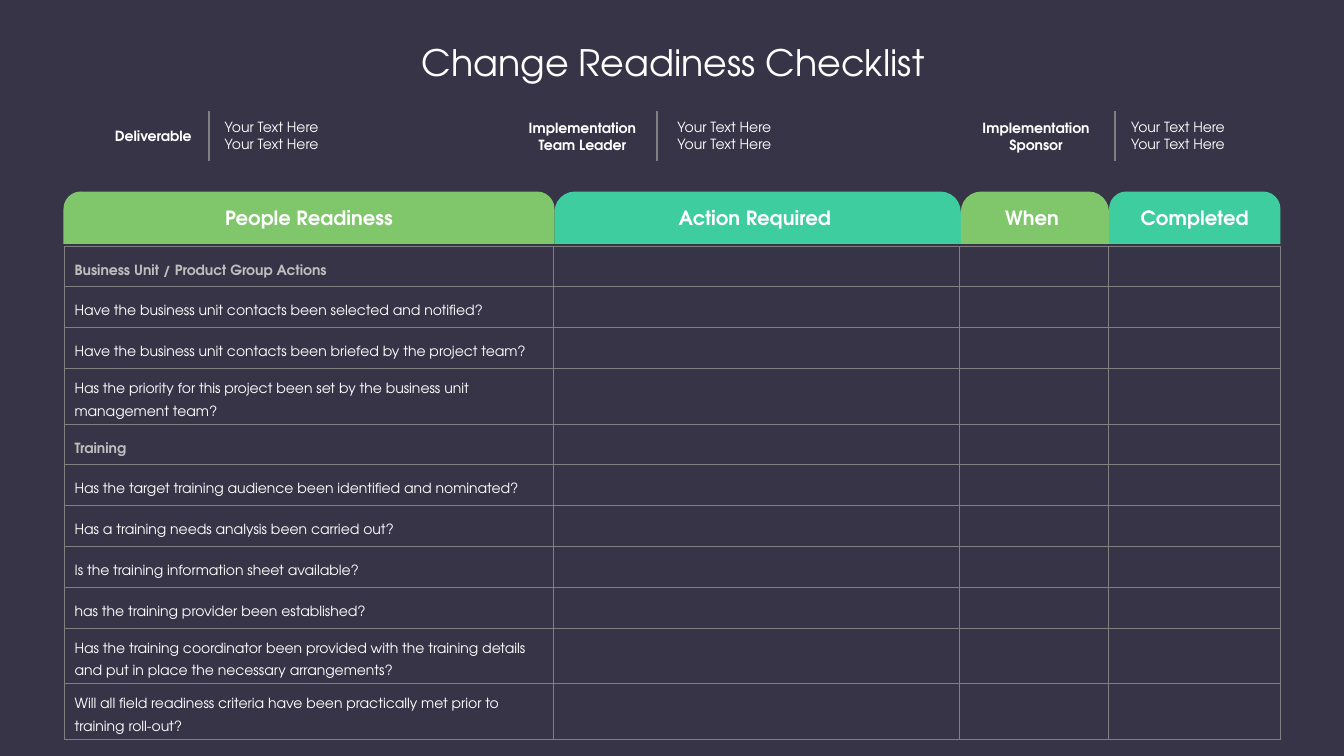
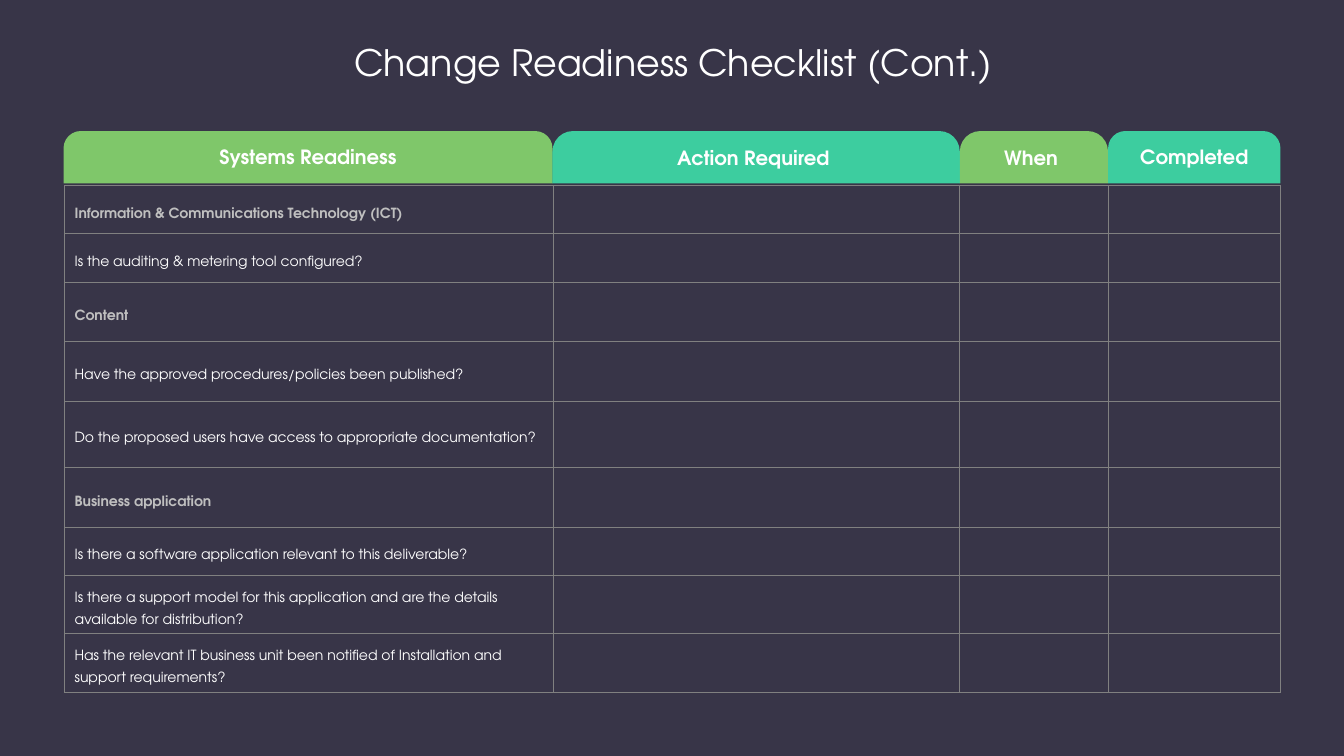
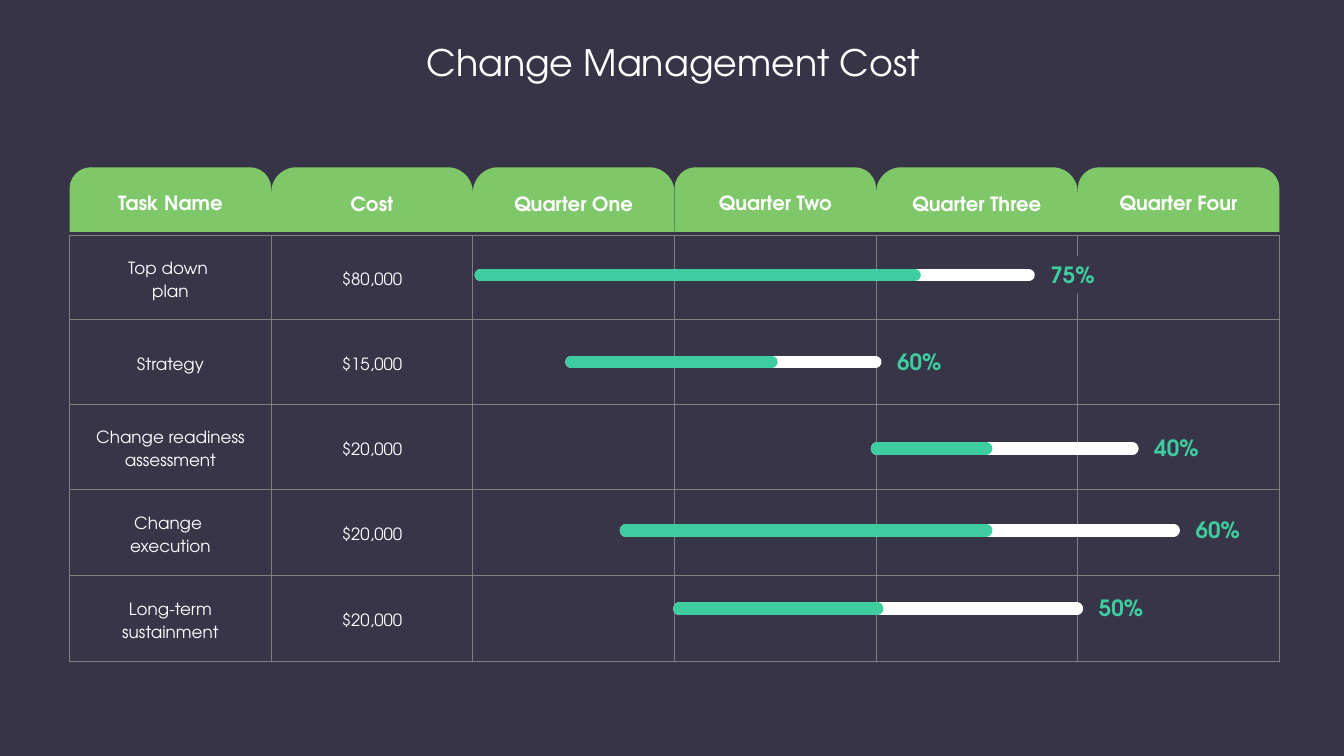
from dataclasses import dataclass
from itertools import accumulate

from pptx import Presentation
from pptx import util as u
from pptx.dml import color
from pptx.enum import shapes, text
from pptx.oxml import ns, xmlchemy

FONT = "TeX Gyre Adventor"
NIGHT, DUSK = "383447", "383548"
GREEN, LIME, TEAL = "7FC76A", "7FC86A", "3DCD9F"
WHITE, SILVER, GREY = "FFFFFF", "BFBFBF", "808080"
CENTER, LEFT = text.PP_ALIGN.CENTER, text.PP_ALIGN.LEFT
MIDDLE, TOP = text.MSO_ANCHOR.MIDDLE, text.MSO_ANCHOR.TOP
SNUG, ROUND = 0.33, 0.39  # corner sizes of the column tabs
SLIDE_AXIS = 6.68


@dataclass
class Style:
    size: float
    colour: str = WHITE
    bold: bool = False
    align: int = CENTER
    spacing: float | None = None


@dataclass
class Tab:
    label: str
    width: float
    fill: str
    corner: float


@dataclass
class Contact:
    role: str
    role_left: float
    role_width: float
    rule_x: float
    text_left: float


@dataclass
class Progress:
    start: float
    done: float
    end: float
    y: float
    share: str


TITLE = Style(26)
TAB = Style(14, bold=True)
ROLE = Style(10, bold=True)
DETAIL = Style(10, align=LEFT)
QUESTION = Style(10, align=LEFT, spacing=16)
SECTION = Style(10, SILVER, True, LEFT, 16)
TASK = Style(12, spacing=16.4)
SHARE = Style(16, TEAL, True, LEFT)

CHECK_COLUMNS = [4.85, 4.03, 1.47, 1.71]

CONTACTS = [
    Contact("Deliverable", 1.03, 0.98, 2.07, 2.13),
    Contact("Implementation Team Leader", 4.95, 1.65, 6.52, 6.62),
    Contact("Implementation Sponsor", 9.44, 1.67, 11.06, 11.12),
]

# Checklist rows: wording, style, row height
LINE, PAIR = 0.394, 0.55
LINE = round((4.8 - 3 * PAIR) / 8, 3)
PEOPLE = [
    ("Business Unit / Product Group Actions", SECTION, LINE),
    ("Have the business unit contacts been selected and notified?", QUESTION, LINE),
    ("Have the business unit contacts been briefed by the project team?", QUESTION, LINE),
    ("Has the priority for this project been set by the business unit management team?",
     QUESTION, PAIR),
    ("Training", SECTION, LINE),
    ("Has the target training audience been identified and nominated?", QUESTION, LINE),
    ("Has a training needs analysis been carried out?", QUESTION, LINE),
    ("Is the training information sheet available?", QUESTION, LINE),
    ("has the training provider been established?", QUESTION, LINE),
    ("Has the training coordinator been provided with the training details "
     "and put in place the necessary arrangements?", QUESTION, PAIR),
    ("Will all field readiness criteria have been practically met prior to training roll-out?",
     QUESTION, PAIR),
]
SYSTEMS = [
    ("Information & Communications Technology (ICT)", SECTION, 0.48),
    ("Is the auditing & metering tool configured?", QUESTION, 0.48),
    ("Content", SECTION, 0.59),
    ("Have the approved procedures/policies been published?", QUESTION, 0.59),
    ("Do the proposed users have access to appropriate documentation?", QUESTION, 0.66),
    ("Business application", SECTION, 0.59),
    ("Is there a software application relevant to this deliverable?", QUESTION, 0.48),
    ("Is there a support model for this application and are the details "
     "available for distribution?", QUESTION, 0.58),
    ("Has the relevant IT business unit been notified of Installation and "
     "support requirements?", QUESTION, 0.58),
]

COST_TABS = [("Task Name", SNUG), ("Cost", ROUND), ("Quarter One", ROUND),
             ("Quarter Two", SNUG), ("Quarter Three", ROUND), ("Quarter Four", SNUG)]
TASKS = [
    ("Top down \nplan", "$80,000", 0.83),
    ("Strategy", "$15,000", 0.84),
    ("Change readiness assessment", "$20,000", 0.85),
    ("Change \nexecution", "$20,000", 0.85),
    ("Long-term sustainment", "$20,000", 0.85),
]
PROGRESS = [
    Progress(4.77, 9.07, 10.2, 2.73, "75%"),
    Progress(5.67, 7.65, 8.68, 3.59, "60%"),
    Progress(8.7, 9.78, 11.23, 4.45, "40%"),
    Progress(6.21, 9.78, 11.64, 5.26, "60%"),
    Progress(6.74, 8.7, 10.68, 6.04, "50%"),
]


def rgb(value: str) -> color.RGBColor:
    return color.RGBColor.from_string(value)


def paint(target, value: str) -> None:
    target.fill.solid()
    target.fill.fore_color.rgb = rgb(value)


def write(frame, words: str, style: Style) -> None:
    """Fill a text frame, one paragraph per line of words."""
    for index, line in enumerate(words.split("\n")):
        para = frame.add_paragraph() if index else frame.paragraphs[0]
        para.alignment = style.align
        if style.spacing:
            para.line_spacing = u.Pt(style.spacing)
        if line:
            span = para.add_run()
            span.text = line
            span.font.name = FONT
            span.font.size = u.Pt(style.size)
            span.font.bold = style.bold
            span.font.color.rgb = rgb(style.colour)


def add_text(page, words: str, style: Style, left: float, top: float, width: float,
             height: float, anchor=TOP, wrap: bool = False) -> None:
    box = page.shapes.add_textbox(*map(u.Inches, (left, top, width, height)))
    box.text_frame.word_wrap = wrap
    box.text_frame.vertical_anchor = anchor
    write(box.text_frame, words, style)


def add_block(page, kind, fill: str, left: float, top: float, width: float, height: float):
    block = page.shapes.add_shape(kind, *map(u.Inches, (left, top, width, height)))
    block.shadow.inherit = False
    paint(block, fill)
    block.line.fill.background()
    block.text_frame.word_wrap = False
    return block


def add_line(page, x1: float, y1: float, x2: float, y2: float, colour: str, weight: float,
             cap: str = "flat") -> None:
    line = page.shapes.add_connector(shapes.MSO_CONNECTOR.STRAIGHT,
                                     *map(u.Inches, (x1, y1, x2, y2)))
    line.line.color.rgb = rgb(colour)
    line.line.width = u.Pt(weight)
    properties = line.element.spPr
    properties.find(ns.qn("a:ln")).set("cap", cap)
    properties.append(xmlchemy.OxmlElement("a:effectLst"))


def add_page(deck, title: str, title_width: float):
    page = deck.slides.add_slide(deck.slide_layouts.get_by_name("Title Only"))
    box = page.shapes.title
    box.left, box.top = u.Inches(SLIDE_AXIS - title_width / 2), u.Inches(0.35)
    box.width, box.height = u.Inches(title_width), u.Inches(0.54)
    frame = box.text_frame
    frame.auto_size = text.MSO_AUTO_SIZE.NONE
    frame.word_wrap = False
    frame.vertical_anchor = TOP
    write(frame, title, TITLE)
    return page


def add_tabs(page, tabs: list[Tab], left: float, top: float, height: float,
             lift: float = 0) -> None:
    """Rounded column heads side by side; lift raises their labels."""
    lefts = accumulate((tab.width for tab in tabs), initial=left)
    for tab, tab_left in zip(tabs, lefts):
        block = add_block(page, shapes.MSO_SHAPE.ROUND_2_SAME_RECTANGLE, tab.fill,
                          tab_left, top, tab.width, height)
        block.adjustments[0] = tab.corner
        frame = block.text_frame
        frame.margin_top, frame.margin_bottom = 0, u.Inches(lift)
        frame.vertical_anchor = MIDDLE
        write(frame, tab.label, TAB)


def add_borders(cell) -> None:
    properties = cell._tc.get_or_add_tcPr()
    for side in ("a:lnL", "a:lnR", "a:lnT", "a:lnB"):
        edge = xmlchemy.OxmlElement(side)
        edge.set("w", str(u.Pt(0.75)))
        fill = xmlchemy.OxmlElement("a:solidFill")
        ink = xmlchemy.OxmlElement("a:srgbClr")
        ink.set("val", GREY)
        fill.append(ink)
        edge.append(fill)
        properties.append(edge)


def add_grid(page, rows: list[list[str]], styles: list[Style], heights: list[float],
             widths: list[float], left: float, top: float, fill: str) -> None:
    """Bordered table; each row gives its first cells, the rest stay empty."""
    frame = page.shapes.add_table(len(rows), len(widths), u.Inches(left), u.Inches(top),
                                  u.Inches(sum(widths)), u.Inches(sum(heights)))
    table = frame.table
    table.first_row = table.horz_banding = False
    for column, width in zip(table.columns, widths):
        column.width = u.Inches(width)
    for row, words, style, height in zip(table.rows, rows, styles, heights):
        row.height = u.Inches(height)
        for index, cell in enumerate(row.cells):
            add_borders(cell)
            paint(cell, fill)
            cell.vertical_anchor = MIDDLE
            write(cell.text_frame, words[index] if index < len(words) else "", style)


def add_checklist(page, heading: str, items: list[tuple[str, Style, float]],
                  widths: list[float], top: float, fill: str) -> None:
    labels = [heading, "Action Required ", "When ", "Completed"]
    fills = [GREEN, TEAL, GREEN, TEAL]
    corners = [SNUG, ROUND, ROUND, SNUG]
    add_tabs(page, list(map(Tab, labels, widths, fills, corners)), 0.63, top, 0.52, 0.06)
    questions, styles, heights = zip(*items)
    add_grid(page, [[question] for question in questions], styles, heights,
             CHECK_COLUMNS, 0.64, top + 0.54, fill)


def add_contact(page, contact: Contact) -> None:
    add_text(page, contact.role, ROLE, contact.role_left, 1.13, contact.role_width, 0.44,
             MIDDLE, wrap=" " in contact.role)
    add_line(page, contact.rule_x, 1.1, contact.rule_x, 1.6, GREY, 1.25)
    add_text(page, "Your Text Here\nYour Text Here", DETAIL, contact.text_left, 1.13, 1.17, 0.44)


def add_progress(page, bar: Progress) -> None:
    for end, colour in ((bar.end, WHITE), (bar.done, TEAL)):
        add_line(page, bar.start, bar.y, end, bar.y, colour, 9, "rnd")
    label = add_block(page, shapes.MSO_SHAPE.RECTANGLE, DUSK,
                      bar.end + 0.12, bar.y - 0.19, 0.65, 0.37)
    label.text_frame.vertical_anchor = TOP
    write(label.text_frame, bar.share, SHARE)


def main() -> None:
    deck = Presentation()
    deck.slide_width, deck.slide_height = u.Inches(13.33), u.Inches(7.5)
    paint(deck.slide_master.background, NIGHT)

    # People checklist with contacts
    page = add_page(deck, "Change Readiness Checklist", 5.24)
    add_checklist(page, "People Readiness", PEOPLE, [4.87, 4.03, 1.47, 1.7], 1.9, NIGHT)
    for contact in CONTACTS:
        add_contact(page, contact)

    # Systems checklist
    page = add_page(deck, "Change Readiness Checklist (Cont.)", 6.59)
    paint(page.background, DUSK)
    add_checklist(page, "Systems Readiness", SYSTEMS, [4.85, 4.04, 1.47, 1.71], 1.3, DUSK)

    # Cost table with progress bars
    page = add_page(deck, "Change Management Cost", 5.14)
    add_tabs(page, [Tab(label, 2, LIME, corner) for label, corner in COST_TABS],
             0.69, 1.66, 0.64)
    add_grid(page, [[task, cost] for task, cost, _ in TASKS], [TASK] * len(TASKS),
             [height for *_, height in TASKS], [2] * len(COST_TABS), 0.69, 2.34, DUSK)
    for bar in PROGRESS:
        add_progress(page, bar)

    deck.save("out.pptx")


if __name__ == "__main__":
    main()
